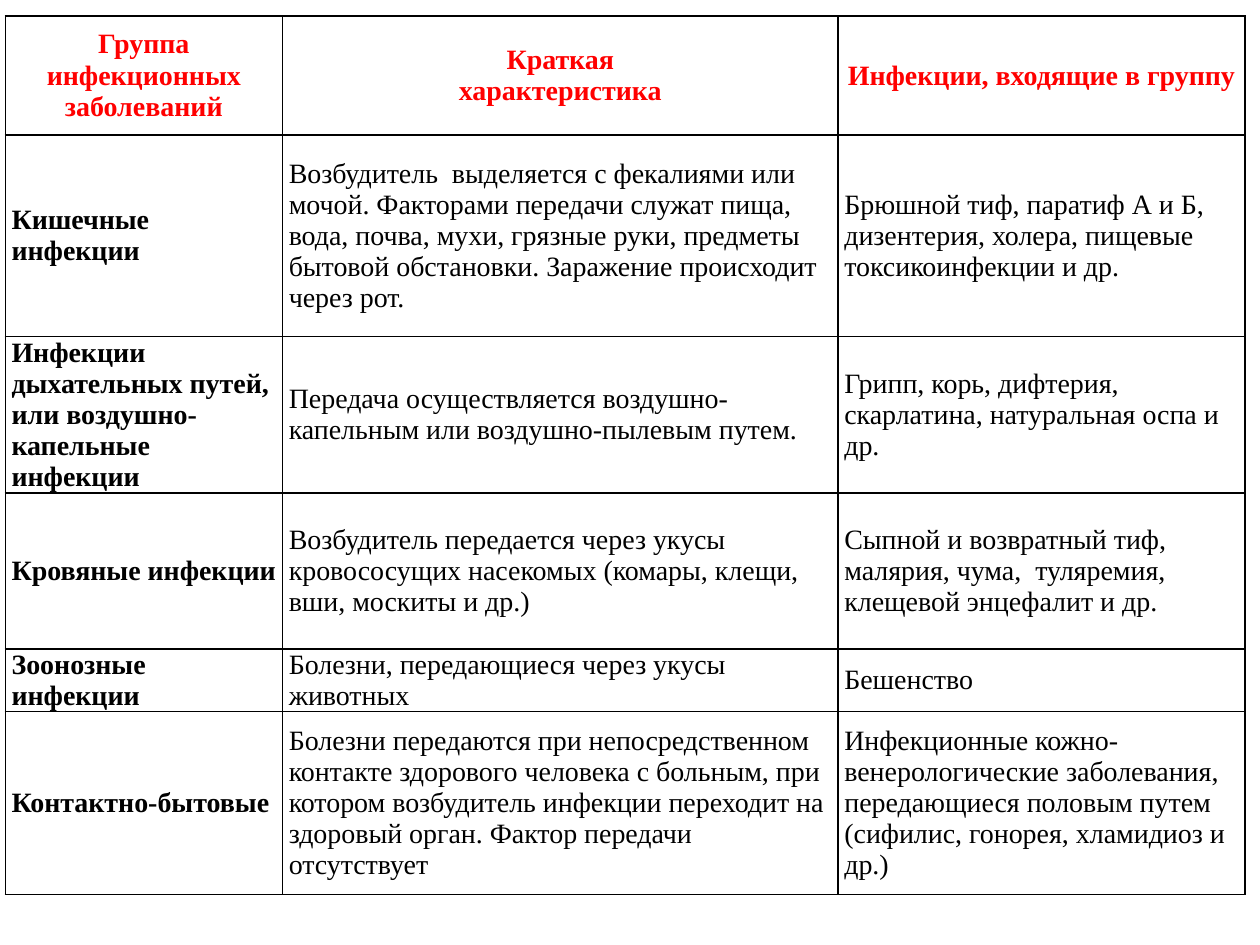
from lxml import etree
from pptx import Presentation
from pptx import util as u
from pptx.dml.color import RGBColor
from pptx.enum import text
from pptx.oxml import ns

BLACK = "000000"
RED = "FF0000"
COLUMN_WIDTHS = [158.4, 317.5, 232.6]
ROW_HEIGHTS = [68, 115.2, 89.3, 89.3, 29.5, 104.5]
HEADERS = [
    "Группа инфекционных заболеваний",
    "Краткая\nхарактеристика",
    "Инфекции, входящие в группу",
]
INFECTIONS = [
    [
        "Кишечные инфекции",
        "Возбудитель  выделяется с фекалиями или мочой. Факторами передачи служат "
        "пища, вода, почва, мухи, грязные руки, предметы бытовой обстановки. "
        "Заражение происходит через рот.",
        "Брюшной тиф, паратиф А и Б, дизентерия, холера, "
        "пищевые токсикоинфекции и др.",
    ],
    [
        "Инфекции дыхательных путей, или воздушно-капельные инфекции",
        "Передача осуществляется воздушно-капельным или воздушно-пылевым путем.",
        "Грипп, корь, дифтерия, скарлатина, натуральная оспа и др.",
    ],
    [
        "Кровяные инфекции",
        "Возбудитель передается через укусы кровососущих насекомых "
        "(комары, клещи, вши, москиты и др.)",
        "Сыпной и возвратный тиф, малярия, чума,  туляремия, "
        "клещевой энцефалит и др.",
    ],
    [
        "Зоонозные инфекции",
        "Болезни, передающиеся через укусы животных",
        "Бешенство",
    ],
    [
        "Контактно-бытовые",
        "Болезни передаются при непосредственном контакте здорового человека с "
        "больным, при котором возбудитель инфекции переходит на здоровый орган. "
        "Фактор передачи отсутствует",
        "Инфекционные кожно-венерологические заболевания, передающиеся половым "
        "путем (сифилис, гонорея, хламидиоз и др.)",
    ],
]


def color(value):
    return RGBColor.from_string(value)


class SlideBuilder:
    font = "Times New Roman"
    size = 16
    margin = 3.6
    border = 1

    def __init__(self, slide):
        self.slide = slide

    def table(self, left, top, widths, heights, rows):
        shape = self.slide.shapes.add_table(
            len(heights), len(widths),
            u.Pt(left), u.Pt(top), u.Pt(sum(widths)), u.Pt(sum(heights)),
        )
        table = shape.table
        table.horz_banding = False
        for column, width in zip(table.columns, widths):
            column.width = u.Pt(width)
        for row, height in zip(table.rows, heights):
            row.height = u.Pt(height)
        for row_index, row in enumerate(rows):
            for column_index, content in enumerate(row):
                header = row_index == 0
                self.cell(
                    table.cell(row_index, column_index),
                    content,
                    RED if header else BLACK,
                    header or column_index == 0,
                    text.PP_ALIGN.CENTER if header else text.PP_ALIGN.LEFT,
                )

    def cell(self, cell, content, ink, bold, alignment):
        cell.margin_left = cell.margin_right = u.Pt(self.margin)
        cell.margin_top = cell.margin_bottom = 0
        cell.vertical_anchor = text.MSO_ANCHOR.MIDDLE
        cell.text_frame.text = content
        for paragraph in cell.text_frame.paragraphs:
            paragraph.alignment = alignment
            for run in paragraph.runs:
                run.font.name = self.font
                run.font.size = u.Pt(self.size)
                run.font.bold = bold
                run.font.color.rgb = color(ink)
        self.borders(cell)
        cell.fill.background()

    def borders(self, cell):
        properties = cell._tc.get_or_add_tcPr()
        for side in ("lnL", "lnR", "lnT", "lnB"):
            line = etree.SubElement(
                properties, ns.qn(f"a:{side}"), w=str(u.Pt(self.border)))
            fill = etree.SubElement(line, ns.qn("a:solidFill"))
            etree.SubElement(fill, ns.qn("a:srgbClr"), val=BLACK)


def main():
    presentation = Presentation()
    presentation.slide_width = u.Pt(720)
    presentation.slide_height = u.Pt(540)
    slide = presentation.slides.add_slide(presentation.slide_layouts[6])
    builder = SlideBuilder(slide)
    builder.table(3, 9.2, COLUMN_WIDTHS, ROW_HEIGHTS, [HEADERS, *INFECTIONS])
    presentation.save("out.pptx")


if __name__ == "__main__":
    main()
